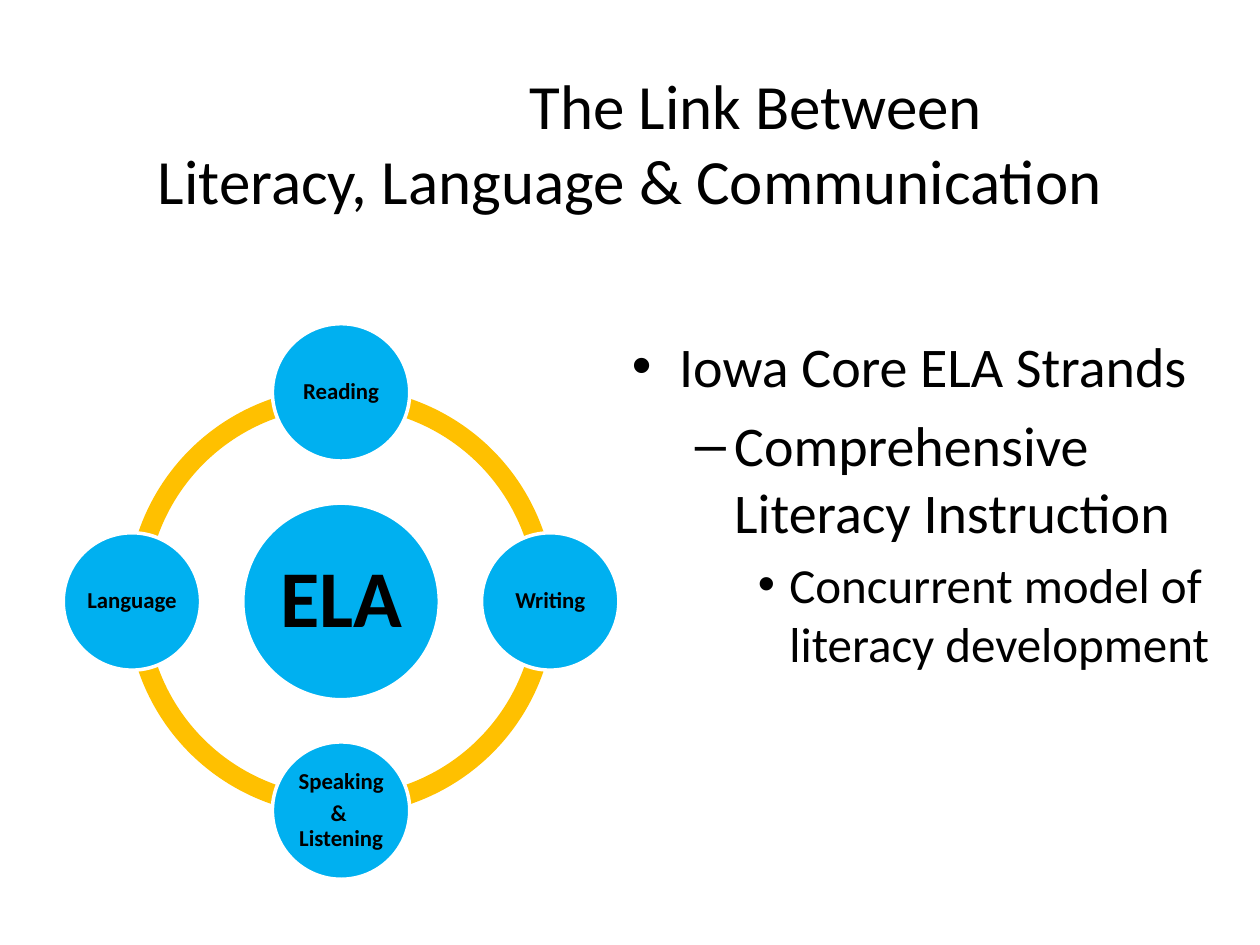
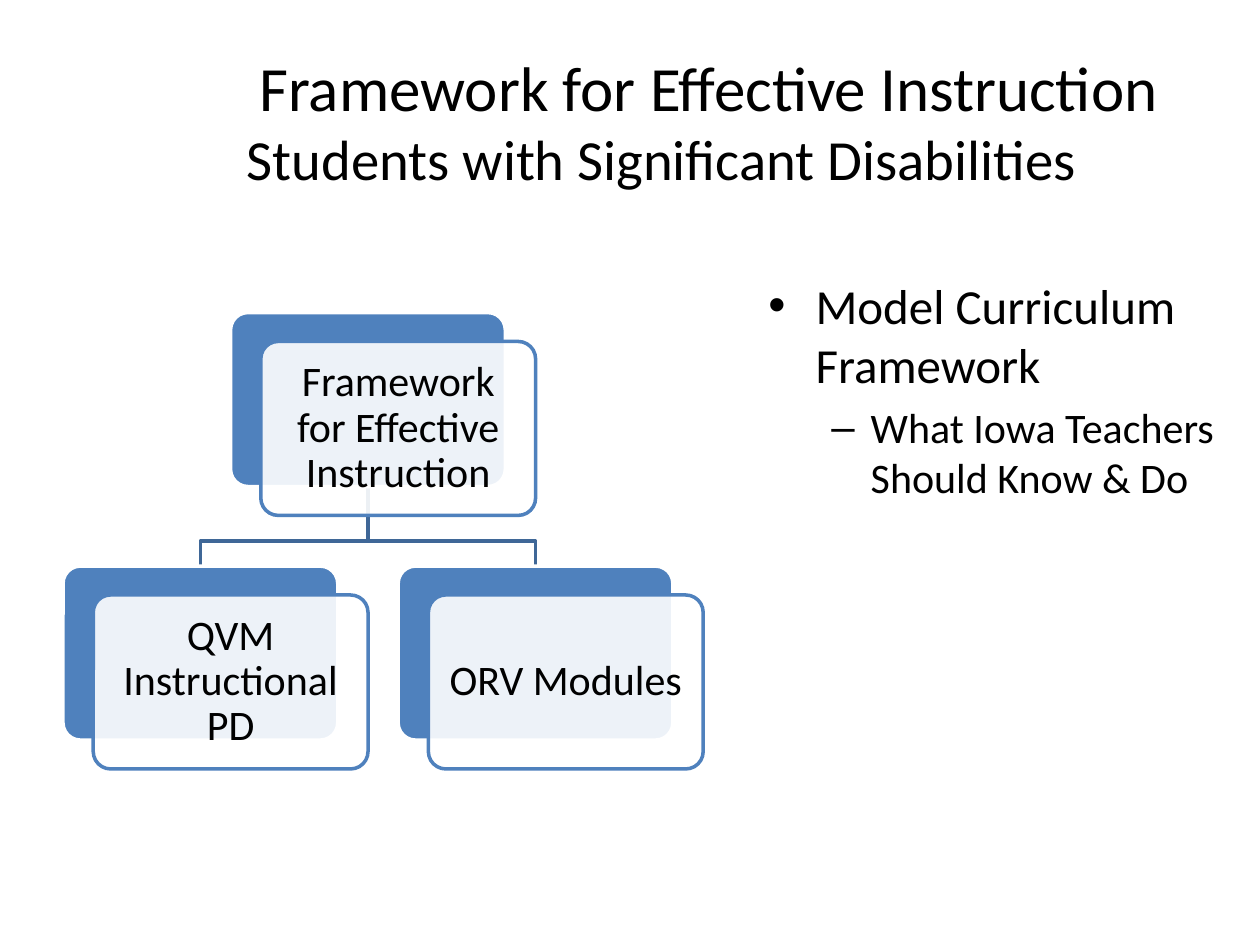
import dataclasses

import pptx
import pptx.dml.color
import pptx.enum.shapes
import pptx.enum.text
import pptx.oxml
import pptx.oxml.ns
import pptx.util

Pt = pptx.util.Pt
Shape = pptx.enum.shapes.MSO_SHAPE
Align = pptx.enum.text.PP_ALIGN
Anchor = pptx.enum.text.MSO_ANCHOR


@dataclasses.dataclass(frozen=True)
class Theme:
    font: str = "Calibri"
    sign: str = "Arial"
    ink: str = "000000"
    paper: str = "FFFFFF"
    ring: str = "FFC000"
    disc: str = "00B0F0"
    card: str = "4F81BD"
    link: str = "3F6797"
    edge: float = 2
    title: float = 36
    under: float = 32.4
    large: float = 32
    mid: float = 28
    small: float = 24
    hub: float = 46
    node: float = 13


THEME = Theme()
# Bullet sign, left margin and hanging indent for each list level
LEVELS = [("•", 27, 27), ("–", 58.5, 22.5), ("•", 90, 18)]


def color(code):
    return pptx.dml.color.RGBColor.from_string(code)


def add_xml(parent, tag, values):
    space = pptx.oxml.ns.nsdecls("a")
    parent.append(pptx.oxml.parse_xml(f"<a:{tag} {space} {values}/>"))


def style(par, size, bold=False):
    for run in par.runs:
        run.font.name = THEME.font
        run.font.size = Pt(size)
        run.font.bold = bold
        run.font.color.rgb = color(THEME.ink)


def indent(par, left, hang=0, sign=None):
    props = par._p.get_or_add_pPr()
    props.set("marL", str(Pt(left)))
    props.set("indent", str(Pt(-hang)))
    if sign:
        add_xml(props, "buFont", f'typeface="{THEME.sign}"')
        add_xml(props, "buChar", f'char="{sign}"')


def add_box(slide, left, top, width, height):
    box = slide.shapes.add_textbox(Pt(left), Pt(top), Pt(width), Pt(height))
    box.text_frame.word_wrap = True
    return box.text_frame


def add_title(slide, place, lines):
    """Each line is its text, its size and a left margin that shifts it."""
    frame = add_box(slide, *place)
    frame.vertical_anchor = Anchor.MIDDLE
    frame.text = "\n".join(text for text, _, _ in lines)
    for par, (_, size, shift) in zip(frame.paragraphs, lines):
        par.alignment = Align.CENTER
        indent(par, shift)
        style(par, size)


def add_list(slide, place, items):
    """Each item sits one level below the item before it."""
    frame = add_box(slide, *place)
    frame.text = "\n".join(text for text, _ in items)
    for par, (_, size), level in zip(frame.paragraphs, items, LEVELS):
        sign, left, hang = level
        par.space_before = Pt(0.2 * size)
        indent(par, left, hang, sign)
        style(par, size)


def add_form(slide, kind, place, fill, line=None):
    form = slide.shapes.add_shape(kind, *map(Pt, place))
    form.shadow.inherit = False
    form.fill.solid()
    form.fill.fore_color.rgb = color(fill)
    if line:
        form.line.color.rgb = color(line)
        form.line.width = Pt(THEME.edge)
    else:
        form.line.fill.background()
    return form


def add_label(form, text, size, inset, bold=False):
    frame = form.text_frame
    frame.word_wrap = True
    frame.vertical_anchor = Anchor.MIDDLE
    frame.margin_left = frame.margin_right = Pt(inset)
    frame.margin_top = frame.margin_bottom = Pt(inset)
    frame.text = text
    for par in frame.paragraphs:
        par.alignment = Align.CENTER
        par.line_spacing = 0.9
        par.space_after = Pt(0.35 * size)
        style(par, size, bold)


def add_disc(slide, x, y, width, text, size, inset):
    place = (x - width / 2, y - width / 2, width, width)
    disc = add_form(slide, Shape.OVAL, place, THEME.disc, THEME.paper)
    add_label(disc, text, size, inset, bold=True)


def add_wheel(slide, x, y, hub, nodes):
    """Draw a ring of four arcs, a hub, and nodes clockwise from the top."""
    reach, span = 119.5, 244.8
    place = (x - span / 2, y - span / 2, span, span)
    for start, end in [(108, 162), (54, 108), (0, 54), (162, 0)]:
        arc = add_form(slide, Shape.BLOCK_ARC, place, THEME.ring)
        for spot, value in enumerate((start, end, 0.046)):
            arc.adjustments[spot] = value
    add_disc(slide, x, y, 112.3, hub, THEME.hub, 4.3)
    ways = [(0, -1), (1, 0), (0, 1), (-1, 0)]
    for (across, down), text in zip(ways, nodes):
        add_disc(slide, x + across * reach, y + down * reach, 78.5,
                 text, THEME.node, 1.4)


def add_card(slide, left, top, width, height, text):
    """Draw a solid card with a see-through, labelled card in front."""
    back = (left, top, width, height)
    front = (left + 17.3, top + 16.5, width, height)
    rear = add_form(slide, Shape.ROUNDED_RECTANGLE, back,
                    THEME.card, THEME.paper)
    face = add_form(slide, Shape.ROUNDED_RECTANGLE, front,
                    THEME.paper, THEME.card)
    for form in (rear, face):
        form.adjustments[0] = 0.1
    tint = face._element.spPr.find(".//" + pptx.oxml.ns.qn("a:srgbClr"))
    add_xml(tint, "alpha", 'val="90000"')
    add_label(face, text, THEME.small, 7.2)


def add_link(slide, start, end, bend):
    """Join two points by a line that turns at height bend."""
    (x, y), (far, low) = start, end
    path = slide.shapes.build_freeform(Pt(x), Pt(y))
    turns = [(x, bend), (far, bend), (far, low)]
    path.add_line_segments([(Pt(a), Pt(b)) for a, b in turns], close=False)
    link = path.convert_to_shape()
    link.shadow.inherit = False
    link.fill.background()
    link.line.color.rgb = color(THEME.link)
    link.line.width = Pt(THEME.edge)


def add_tree(slide, left, top, root, leaves):
    width, height, step, drop = 157, 99.4, 191.5, 144.9
    mid = left + step * (len(leaves) - 1) / 2
    spots = [left + step * place for place in range(len(leaves))]
    base = top + drop
    for spot in reversed(spots):
        add_link(slide, (mid + width / 2, top + height),
                 (spot + width / 2, base), base - 14.4)
    add_card(slide, mid, top, width, height, root)
    for spot, text in zip(spots, leaves):
        add_card(slide, spot, base, width, height, text)


def main():
    deck = pptx.Presentation()
    deck.slide_width, deck.slide_height = Pt(720), Pt(540)
    blank = deck.slide_layouts[6]

    slide = deck.slides.add_slide(blank)
    add_title(slide, (0, 36, 720, 90), [
        ("The Link Between", THEME.title, 144),
        ("Literacy, Language & Communication", THEME.title, 0)])
    add_wheel(slide, 194.9, 343.7, "ELA", [
        "Reading", "Writing", "Speaking\n& \vListening", "Language"])
    add_list(slide, (354, 186, 354, 356), [
        ("Iowa Core ELA Strands", THEME.large),
        ("Comprehensive Literacy Instruction", THEME.large),
        ("Concurrent model of literacy development", THEME.mid)])

    slide = deck.slides.add_slide(blank)
    add_title(slide, (36, 23.5, 684, 90), [
        ("Framework for Effective Instruction", THEME.title, 54),
        ("Students with Significant Disabilities", THEME.under, 0)])
    add_tree(slide, 36, 178.6, "Framework for Effective Instruction",
             ["QVM Instructional PD", "ORV Modules"])
    add_list(slide, (432, 153.8, 318, 356), [
        ("Model Curriculum Framework", THEME.mid),
        ("What Iowa Teachers Should Know & Do", THEME.small)])

    deck.save("out.pptx")


if __name__ == "__main__":
    main()
